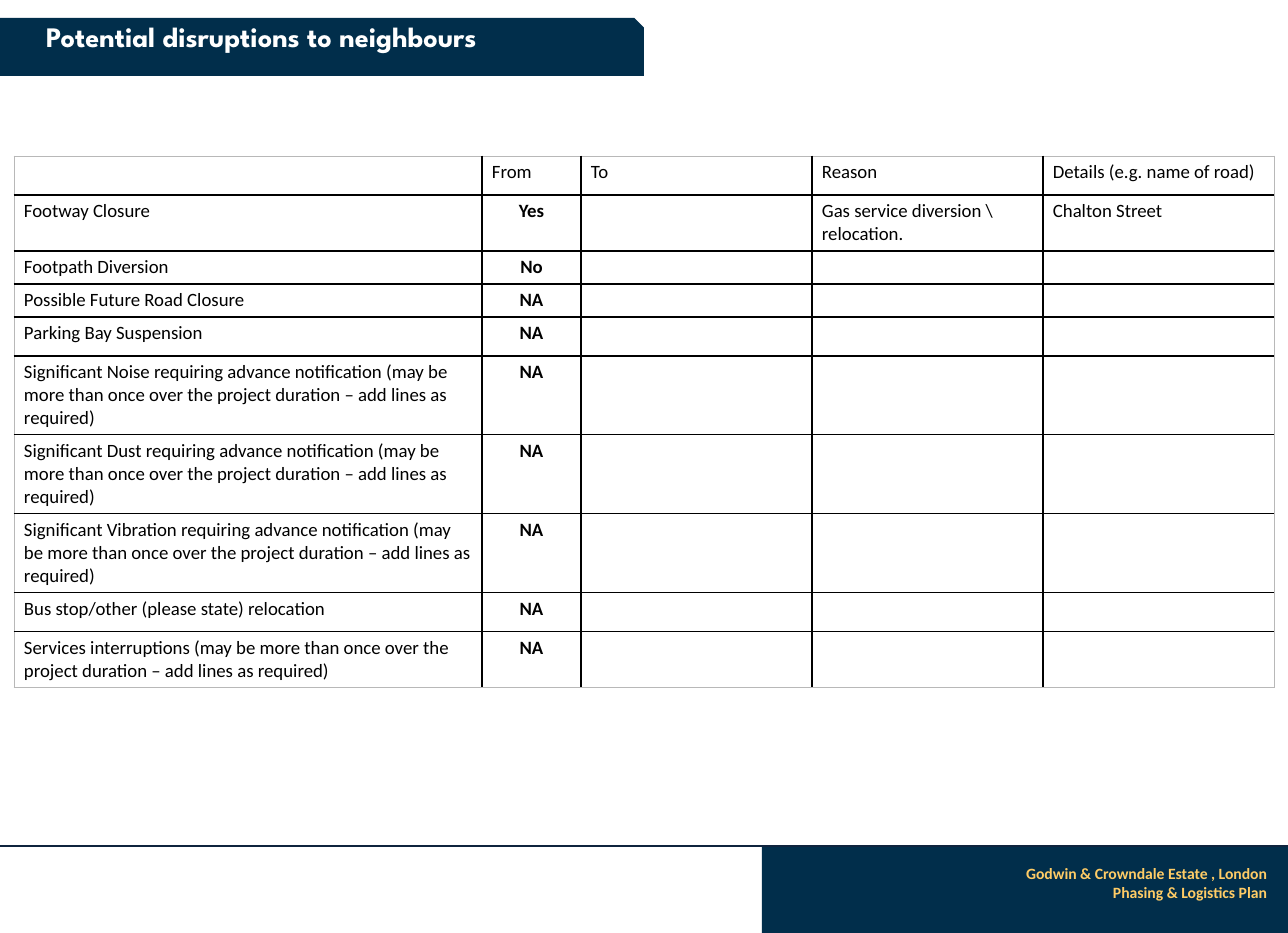
from lxml import etree
from pptx import Presentation
from pptx.dml.color import RGBColor
from pptx.enum.shapes import MSO_CONNECTOR, MSO_SHAPE
from pptx.enum.text import MSO_ANCHOR, PP_ALIGN
from pptx.oxml.ns import qn
from pptx.util import Emu, Pt

SCALE = 914400 / 112.8
PAGE_WIDTH, PAGE_HEIGHT = 1288, 933
TITLE_ONLY = 5
RECTANGLE, SNIPPED = MSO_SHAPE.RECTANGLE, MSO_SHAPE.SNIP_1_RECTANGLE
STRAIGHT = MSO_CONNECTOR.STRAIGHT
LEFT, CENTER, RIGHT = PP_ALIGN.LEFT, PP_ALIGN.CENTER, PP_ALIGN.RIGHT
TOP, MIDDLE = MSO_ANCHOR.TOP, MSO_ANCHOR.MIDDLE
COLORS = {"navy": "012E4B", "rule": "0F243E", "gold": "FFCC66",
          "white": "FFFFFF", "black": "000000", "edge": "B8B8B8"}

NOTICE = "(may be more than once over the project duration – add lines as required)"
HEADINGS = ["", "From", "To", "Reason", "Details (e.g. name of road)"]
DISRUPTIONS = [
    ("Footway Closure", "Yes", "", "Gas service diversion \\ relocation.", "Chalton Street"),
    ("Footpath Diversion", "No"),
    ("Possible Future Road Closure", "NA"),
    ("Parking Bay Suspension", "NA"),
    *((f"Significant {kind} requiring advance notification {NOTICE}", "NA")
      for kind in ("Noise", "Dust", "Vibration")),
    ("Bus stop/other (please state) relocation", "NA"),
    (f"Services interruptions {NOTICE}", "NA"),
]
COLUMN_WIDTHS = [468, 99, 231, 231, 231]
ROW_HEIGHTS = [39, 56, 33, 33, 39, 78, 79, 78, 39, 56]


def px(length):
    return Emu(round(length * SCALE))


def color(name):
    return RGBColor.from_string(COLORS[name])


def format_para(para, size, font, color_name, bold=False, align=LEFT):
    para.alignment = align
    for span in para.runs:
        span.font.size = Pt(size)
        span.font.name = font
        span.font.bold = bold
        span.font.color.rgb = color(color_name)


def add_block(page, preset, left, top, width, height):
    block = page.shapes.add_shape(preset, px(left), px(top), px(width), px(height))
    block.shadow.inherit = False
    block.fill.solid()
    block.fill.fore_color.rgb = color("navy")
    block.line.fill.background()


def add_header(page, left, top, width, height):
    add_block(page, SNIPPED, left, top, width, height)
    title = page.shapes.title
    title.left, title.top = px(left + 15), px(top - 4)
    title.width, title.height = px(493), px(height + 8)
    # Keep the navy band behind the title text.
    page.shapes._spTree.append(title._element)
    frame = title.text_frame
    frame.text = "Potential disruptions to neighbours"
    frame.word_wrap = True
    frame.vertical_anchor = TOP
    format_para(frame.paragraphs[0], 18, "League Spartan", "white", True, CENTER)


def add_footer(page, left, top, width, height):
    block_left = left + 762
    add_block(page, RECTANGLE, block_left, top, left + width - block_left, height)
    rule = page.shapes.add_connector(STRAIGHT, px(left), px(top), px(left + width), px(top))
    rule.line.color.rgb = color("rule")
    rule.line.width = Pt(0.75)
    etree.SubElement(rule._element.spPr, qn("a:effectLst"))
    box = page.shapes.add_textbox(px(block_left + 7), px(top + 12), px(509), px(50))
    frame = box.text_frame
    frame.word_wrap = True
    frame.text = "Godwin & Crowndale Estate , London\nPhasing & Logistics Plan"
    for para in frame.paragraphs:
        format_para(para, 10, "Calibri", "gold", True, RIGHT)


def set_border(cell, side, width, color_name):
    line = etree.SubElement(cell._tc.get_or_add_tcPr(), qn(f"a:ln{side}"), w=str(Pt(width)))
    fill = etree.SubElement(line, qn("a:solidFill"))
    etree.SubElement(fill, qn("a:srgbClr"), val=COLORS[color_name])


def fill_cell(cell, text, is_answer):
    cell.margin_left = cell.margin_right = px(10)
    cell.margin_top = cell.margin_bottom = px(5)
    cell.vertical_anchor = TOP
    para = cell.text_frame.paragraphs[0]
    if text:
        para.text = text
        format_para(para, 12, "Calibri", "black", is_answer, CENTER if is_answer else LEFT)
    else:
        # An empty cell needs its own text size, or the row grows.
        etree.SubElement(para._p, qn("a:endParaRPr"), sz="1200")


def add_disruption_table(page, left, top):
    rows = [HEADINGS, *DISRUPTIONS]
    frame = page.shapes.add_table(len(rows), len(HEADINGS), px(left), px(top),
                                  px(sum(COLUMN_WIDTHS)), px(sum(ROW_HEIGHTS)))
    table = frame.table
    table.first_row = table.horz_banding = False
    for column, width in zip(table.columns, COLUMN_WIDTHS):
        column.width = px(width)
    last_row, last_column = len(rows) - 1, len(HEADINGS) - 1
    for r, (row, height, texts) in enumerate(zip(table.rows, ROW_HEIGHTS, rows)):
        row.height = px(height)
        for c, cell in enumerate(row.cells):
            fill_cell(cell, texts[c] if c < len(texts) else "", r > 0 and c == 1)
            outer_sides = {"L": c == 0, "R": c == last_column, "T": r == 0, "B": r == last_row}
            for side, is_outer in outer_sides.items():
                set_border(cell, side, *((0.5, "edge") if is_outer else (1, "black")))
            cell.fill.solid()
            cell.fill.fore_color.rgb = color("white")


def main():
    deck = Presentation()
    deck.slide_width, deck.slide_height = px(PAGE_WIDTH), px(PAGE_HEIGHT)
    page = deck.slides.add_slide(deck.slide_layouts[TITLE_ONLY])
    add_footer(page, 0, 846, PAGE_WIDTH, PAGE_HEIGHT - 846)
    add_header(page, 0, 18, 644, 58)
    add_disruption_table(page, 14, 156)
    deck.save("out.pptx")


if __name__ == "__main__":
    main()
